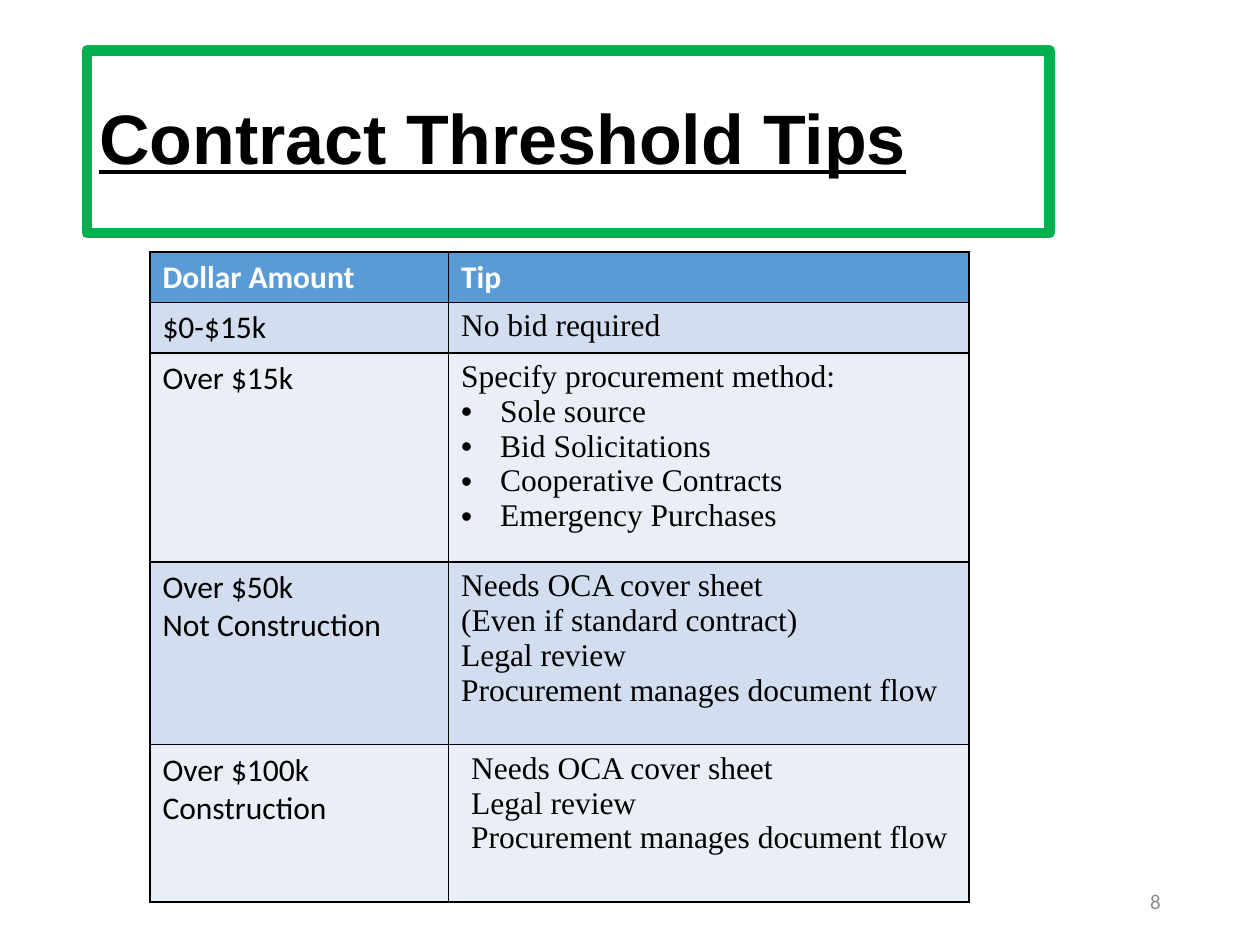
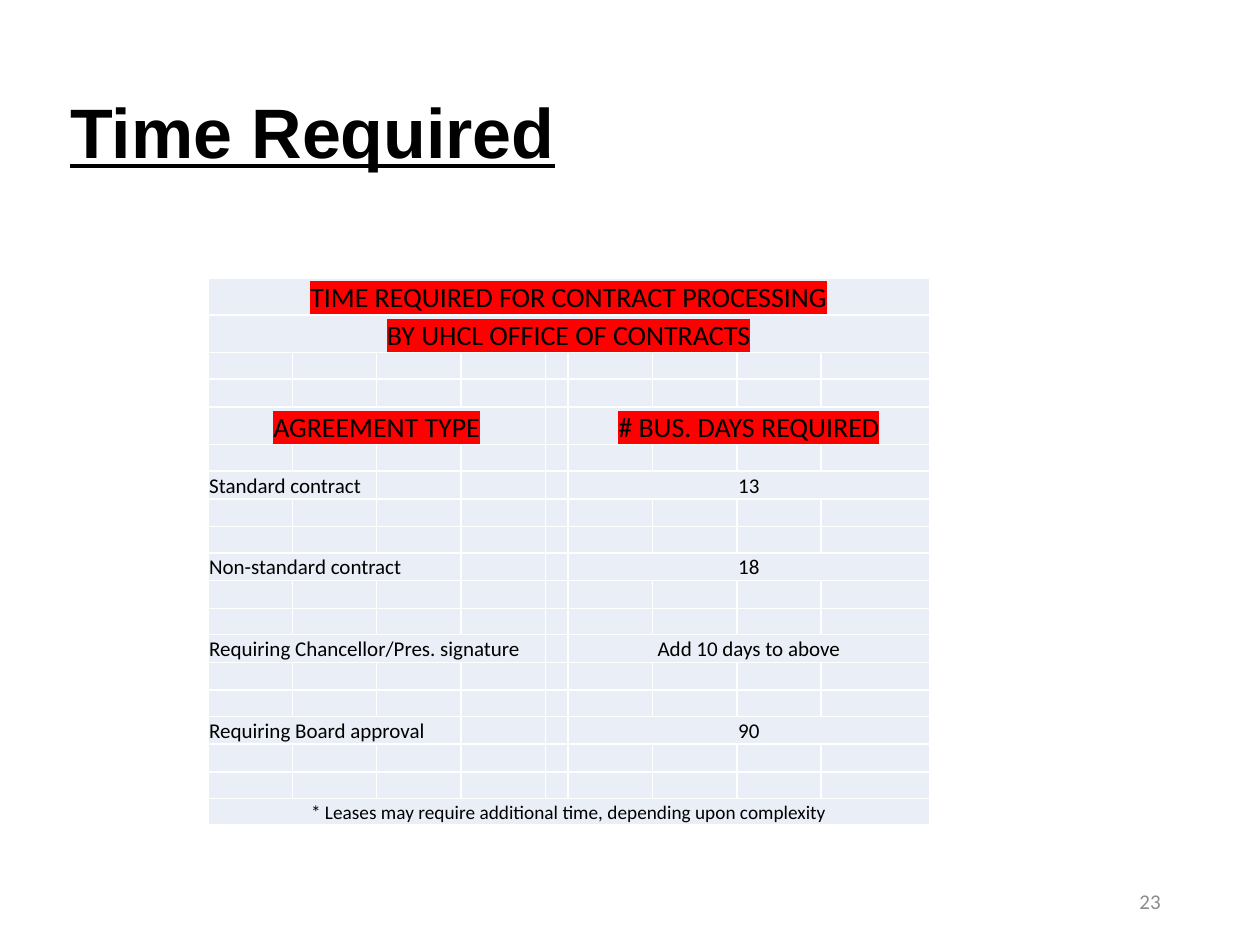
"""Build two slides on contract thresholds and the time contracts require."""
from lxml import etree
from pptx import Presentation
from pptx.dml.color import RGBColor
from pptx.enum.text import MSO_ANCHOR, PP_ALIGN
from pptx.oxml.ns import qn
from pptx.util import Pt

LEFT, MID, RIGHT = PP_ALIGN.LEFT, PP_ALIGN.CENTER, PP_ALIGN.RIGHT
TOP, CENTER, BOTTOM = MSO_ANCHOR.TOP, MSO_ANCHOR.MIDDLE, MSO_ANCHOR.BOTTOM
PX = 9144
HEX = {
    "black": "000000", "white": "FFFFFF", "green": "00B050", "red": "FF0000",
    "gray": "8C8C8C", "blue": "5B9BD5", "mist": "D2DEEF", "pale": "EAEFF7",
}


def write(frame, lines, size=18, font="Calibri", color="black", bold=False, line=False,
          align=LEFT, space=None, mark=None, bullet=False, indent=None):
    """Fill a text frame with one paragraph for each line."""
    for i, text in enumerate(lines):
        para = frame.paragraphs[0] if i == 0 else frame.add_paragraph()
        para.alignment = align
        if space:
            para.line_spacing = space
        props = para._p.get_or_add_pPr()
        if indent and (i or not bullet):
            left, first = indent
            props.set("marL", str(left * PX))
            props.set("indent", str(first * PX))
        if bullet and i:
            etree.SubElement(props, qn("a:buFont")).set("typeface", "Arial")
            etree.SubElement(props, qn("a:buChar")).set("char", "•")
        run = para.add_run()
        run.text = text
        run.font.size, run.font.name = Pt(size), font
        run.font.bold, run.font.underline = bold, line
        run.font.color.rgb = RGBColor.from_string(HEX[color])
        if mark:
            glow = etree.Element(qn("a:highlight"))
            etree.SubElement(glow, qn("a:srgbClr")).set("val", HEX[mark])
            run._r.rPr.find(qn("a:solidFill")).addnext(glow)


def grid(slide, x, y, cols, rows, fills, edge):
    """Add a table with one fill for each row and a border on every cell."""
    table = slide.shapes.add_table(len(rows), len(cols), x * PX, y * PX,
                                   sum(cols) * PX, sum(rows) * PX).table
    table.first_row = table.horz_banding = False
    for col, wide in zip(table.columns, cols):
        col.width = wide * PX
    for row, high, fill in zip(table.rows, rows, fills):
        row.height = high * PX
        for cell in row.cells:
            cell.fill.solid()
            cell.fill.fore_color.rgb = RGBColor.from_string(HEX[fill])
            props = cell._tc.get_or_add_tcPr()
            for i, side in enumerate(("lnL", "lnR", "lnT", "lnB")):
                rule = etree.Element(qn(f"a:{side}"), w=str(Pt(1)))
                paint = etree.SubElement(rule, qn("a:solidFill"))
                etree.SubElement(paint, qn("a:srgbClr")).set("val", HEX[edge])
                props.insert(i, rule)
    return table


deck = Presentation()
deck.slide_width, deck.slide_height = 1000 * PX, 750 * PX
slides = []
for title, x, y, page in (("Contract Threshold Tips", 69, 40, "8"),
                          ("Time Required", 46, 35, "23")):
    slide = deck.slides.add_slide(deck.slide_layouts[6])
    slides.append(slide)
    head = slide.shapes.add_textbox(x * PX, y * PX, 764 * PX, 145 * PX)
    foot = slide.shapes.add_textbox(706 * PX, 695 * PX, 225 * PX, 40 * PX)
    for box in (head, foot):
        box.text_frame.word_wrap = True
        box.text_frame.vertical_anchor = CENTER
    write(head.text_frame, [title], size=40, font="Arial", bold=True, line=True, space=0.9)
    write(foot.text_frame, [page], size=12, color="gray", align=RIGHT)
    if slide is slides[0]:
        head.line.color.rgb = RGBColor.from_string(HEX["green"])
        head.line.width = Pt(6)

tips = grid(slides[0], 119, 200, [237, 413], [38, 38, 166, 145, 125],
            ["blue", "mist", "pale", "mist", "pale"], "black")
for c, text in enumerate(("Dollar Amount", "Tip")):
    write(tips.cell(0, c).text_frame, [text], color="white", bold=True)
levels = [
    (["$0-$15k"], ["No bid required"], {}),
    (["Over $15k"],
     ["Specify procurement method:", "Sole source", "Bid Solicitations",
      "Cooperative Contracts", "Emergency Purchases"],
     {"bullet": True, "indent": (31, -31)}),
    (["Over $50k", "Not Construction"],
     ["Needs OCA cover sheet", "(Even if standard contract)", "Legal review",
      "Procurement manages document flow"], {}),
    (["Over $100k Construction"],
     ["Needs OCA cover sheet", "Legal review", "Procurement manages document flow"],
     {"indent": (188, -180)}),
]
for r, (amount, tip, style) in enumerate(levels, 1):
    write(tips.cell(r, 0).text_frame, amount)
    write(tips.cell(r, 1).text_frame, tip, font="Times New Roman", **style)

cols = [67] * 4 + [18] + [67] * 3 + [86]
rows = [29, 30, 21, 22, 30] + [21, 22, 22] * 4 + [21, 21]
times = grid(slides[1], 165, 221, cols, rows, ["pale"] * len(rows), "white")
for cell in times.iter_cells():
    cell.vertical_anchor = BOTTOM
    cell.margin_left = cell.margin_right = cell.margin_top = PX
    cell.margin_bottom = 0
    cell.text_frame.paragraphs[0]._p.get_or_add_endParaRPr().set("sz", "1000")

banner = {"size": 16, "mark": "red", "align": MID}
entries = [
    (0, 0, 9, "TIME REQUIRED FOR CONTRACT PROCESSING", banner),
    (1, 0, 9, "BY UHCL OFFICE OF CONTRACTS", banner),
    (4, 0, 4, "AGREEMENT TYPE", banner),
    (4, 5, 4, "# BUS. DAYS REQUIRED", banner),
    (18, 0, 9, "* Leases may require additional time, depending upon complexity",
     {"size": 11, "align": MID}),
]
kinds = [
    ("Standard contract", 2, "13"),
    ("Non-standard contract", 3, "18"),
    ("Requiring Chancellor/Pres. signature", 4, "Add 10 days to above"),
    ("Requiring Board approval", 3, "90"),
]
for i, (kind, span, days) in enumerate(kinds):
    r = 6 + 3 * i
    entries += [(r, 0, span, kind, {"size": 12}),
                (r, 5, 4, days, {"size": 12, "align": MID})]
for r, c, span, text, style in entries:
    cell = times.cell(r, c)
    cell.merge(times.cell(r, c + span - 1))
    write(cell.text_frame, [text], **style)

deck.save("out.pptx")
